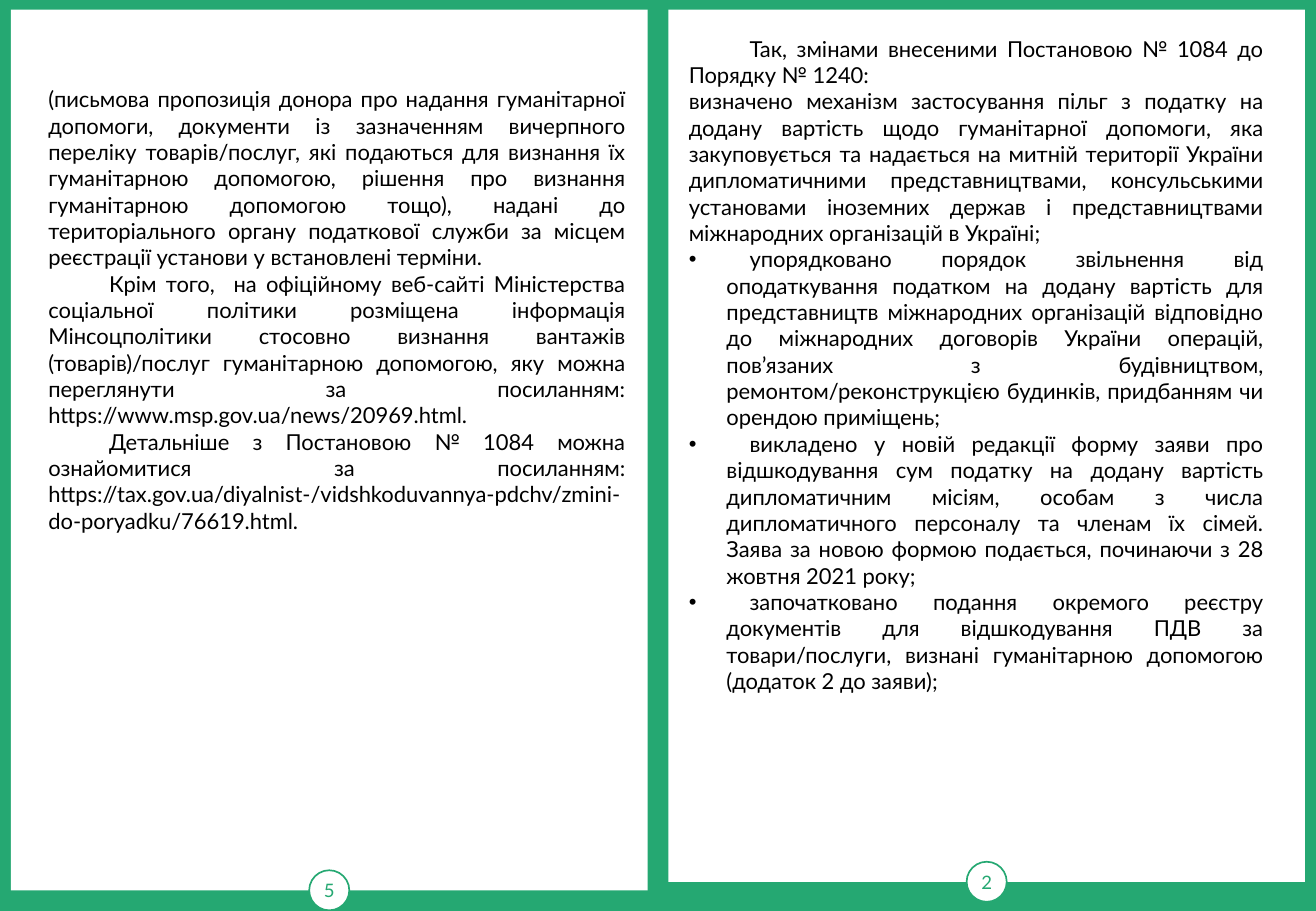
from pptx import Presentation
from pptx.dml.color import RGBColor
from pptx.enum.shapes import MSO_SHAPE
from pptx.enum.text import MSO_ANCHOR, MSO_AUTO_SIZE, PP_ALIGN
from pptx.oxml.ns import qn
from pptx.util import Inches, Pt
from lxml.etree import SubElement

COLOURS = {"green": "25A872", "white": "FFFFFF", "black": "000000"}
FONT = "Lato"
CIRCLE = 0.33
FIRST_LINE = 0.5
HANGING = 0.31

LEFT_TEXT = [
    ("plain", "(письмова пропозиція донора про надання гуманітарної допомоги, документи із зазначенням "
     "вичерпного переліку товарів/послуг, які подаються для визнання їх гуманітарною допомогою, рішення "
     "про визнання гуманітарною допомогою тощо), надані до територіального органу податкової служби за "
     "місцем реєстрації установи у встановлені терміни."),
    ("first", "Крім того,  на офіційному веб-сайті Міністерства соціальної політики розміщена інформація "
     "Мінсоцполітики стосовно визнання вантажів (товарів)/послуг гуманітарною допомогою, яку можна "
     "переглянути за посиланням: https://www.msp.gov.ua/news/20969.html."),
    ("first", "Детальніше з Постановою № 1084 можна ознайомитися за посиланням: "
     "https://tax.gov.ua/diyalnist-/vidshkoduvannya-pdchv/zmini-do-poryadku/76619.html."),
]
RIGHT_TEXT = [
    ("first", "Так, змінами внесеними Постановою № 1084 до Порядку № 1240:"),
    ("plain", "визначено механізм застосування пільг з податку на додану вартість щодо гуманітарної "
     "допомоги, яка закуповується та надається на митній території України дипломатичними "
     "представництвами, консульськими установами іноземних держав і представництвами міжнародних "
     "організацій в Україні;"),
    ("bullet", "упорядковано порядок звільнення від оподаткування податком на додану вартість для "
     "представництв міжнародних організацій відповідно до міжнародних договорів України операцій, "
     "пов’язаних з будівництвом, ремонтом/реконструкцією будинків, придбанням чи орендою приміщень;"),
    ("bullet", "викладено у новій редакції форму заяви про відшкодування сум податку на додану вартість "
     "дипломатичним місіям, особам з числа дипломатичного персоналу та членам їх сімей. Заява за новою "
     "формою подається, починаючи з 28 жовтня 2021 року;"),
    ("bullet", "започатковано подання окремого реєстру документів для відшкодування ПДВ за "
     "товари/послуги, визнані гуманітарною допомогою (додаток 2 до заяви);"),
]


def colour(name):
    """Return the named colour."""
    return RGBColor.from_string(COLOURS[name])


def set_font(para, size, name):
    """Set the font of a paragraph."""
    para.font.name = FONT
    para.font.size = Pt(size)
    para.font.color.rgb = colour(name)


def add_white_shape(group, kind, box):
    """Add a plain white shape to the group."""
    shape = group.shapes.add_shape(kind, *map(Inches, box))
    shape.shadow.inherit = False
    shape.fill.solid()
    shape.fill.fore_color.rgb = colour("white")
    shape.line.fill.background()
    return shape


def add_page(slide, box, number):
    """Add a white page with its number in a circle on the bottom edge."""
    left, top, width, height = box
    group = slide.shapes.add_group_shape()
    add_white_shape(group, MSO_SHAPE.RECTANGLE, box)
    circle = add_white_shape(group, MSO_SHAPE.OVAL, (
        left + (width - CIRCLE) / 2, top + height - CIRCLE / 2, CIRCLE, CIRCLE))
    circle.line.color.rgb = colour("green")
    circle.line.width = Pt(1)
    frame = circle.text_frame
    frame.margin_left = frame.margin_right = frame.margin_top = frame.margin_bottom = 0
    frame.vertical_anchor = MSO_ANCHOR.MIDDLE
    para = frame.paragraphs[0]
    para.text = number
    para.alignment = PP_ALIGN.CENTER
    set_font(para, 11, "green")


def format_indent(para, style):
    """Apply a first-line indent, or a bullet followed by a tab stop."""
    properties = para._p.get_or_add_pPr()
    if style == "first":
        properties.set("indent", str(Inches(FIRST_LINE)))
    elif style == "bullet":
        properties.set("marL", str(Inches(HANGING)))
        properties.set("indent", str(-Inches(HANGING)))
        SubElement(properties, qn("a:buFont"), typeface="Arial")
        SubElement(properties, qn("a:buChar"), char="•")
        tabs = SubElement(properties, qn("a:tabLst"))
        SubElement(tabs, qn("a:tab"), pos=str(Inches(FIRST_LINE)), algn="l")


def add_body(slide, box, paragraphs, anchor):
    """Add a justified text column."""
    frame = slide.shapes.add_textbox(*map(Inches, box)).text_frame
    frame.word_wrap = True
    frame.auto_size = MSO_AUTO_SIZE.SHAPE_TO_FIT_TEXT
    frame.vertical_anchor = anchor
    for index, (style, text) in enumerate(paragraphs):
        para = frame.add_paragraph() if index else frame.paragraphs[0]
        para.text = "\t" + text if style == "bullet" else text
        para.alignment = PP_ALIGN.JUSTIFY
        format_indent(para, style)
        set_font(para, 13, "black")


def main():
    """Build the two-page spread."""
    deck = Presentation()
    deck.slide_width, deck.slide_height = Inches(10.83), Inches(7.5)
    slide = deck.slides.add_slide(deck.slide_layouts[6])
    slide.background.fill.solid()
    slide.background.fill.fore_color.rgb = colour("green")
    add_page(slide, (0.09, 0.08, 5.24, 7.25), "5")
    add_page(slide, (5.5, 0.08, 5.24, 7.18), "2")
    add_body(slide, (5.57, 0.24, 4.92, 6.88), RIGHT_TEXT, MSO_ANCHOR.TOP)
    add_body(slide, (0.3, 0.31, 4.94, 4.48), LEFT_TEXT, MSO_ANCHOR.MIDDLE)
    deck.save("out.pptx")


if __name__ == "__main__":
    main()
